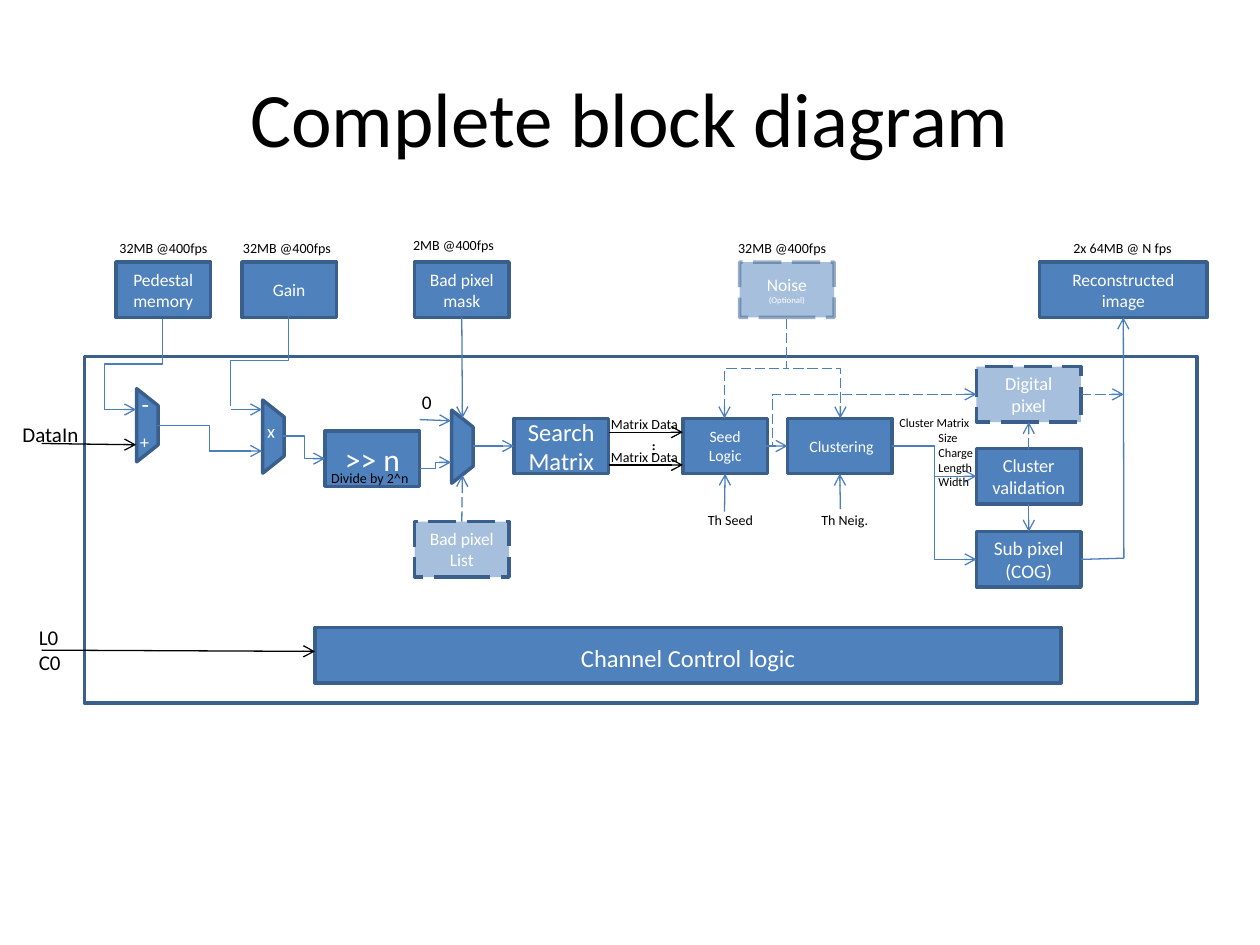
from dataclasses import dataclass
from typing import NamedTuple

from lxml import etree
from pptx import Presentation
from pptx.dml.color import RGBColor
from pptx.enum.dml import MSO_LINE
from pptx.enum.shapes import MSO_CONNECTOR, MSO_SHAPE
from pptx.enum.text import MSO_ANCHOR, MSO_AUTO_SIZE, PP_ALIGN
from pptx.oxml.ns import qn
from pptx.util import Inches, Pt

RECTANGLE, TRAPEZOID = MSO_SHAPE.RECTANGLE, MSO_SHAPE.TRAPEZOID
STRAIGHT, ELBOW = MSO_CONNECTOR.STRAIGHT, MSO_CONNECTOR.ELBOW
LONG_DASH, MIDDLE = MSO_LINE.LONG_DASH, MSO_ANCHOR.MIDDLE
CENTER, LEFT = PP_ALIGN.CENTER, PP_ALIGN.LEFT
FIT_TEXT = MSO_AUTO_SIZE.SHAPE_TO_FIT_TEXT
TOP, WEST, BOTTOM, EAST = range(4)

COLORS = {"block": "4F81BD", "border": "3A5F8C", "wire": "4B7EBC", "black": "000000", "white": "FFFFFF"}
FONT = "Calibri"
BLOCK_HEIGHT = 0.44
MEMORY_TOP = 2.08
STAGE_TOP = 3.32


class Run(NamedTuple):
    text: str
    size: float


class Point(NamedTuple):
    x: float
    y: float


class Joint(NamedTuple):
    block: str
    side: int


@dataclass(frozen=True)
class Block:
    left: float
    top: float
    width: float
    paragraphs: list
    optional: bool = False
    faded_border: bool = False


@dataclass(frozen=True)
class Mux:
    left: float
    top: float
    runs: tuple = ()


@dataclass(frozen=True)
class Label:
    text: str
    left: float
    top: float
    width: float
    height: float = 0.24
    size: float = 8
    vertical: bool = False
    indent: float = 0


@dataclass(frozen=True)
class Wire:
    start: Point | Joint
    end: Point | Joint
    arrow: bool = True
    dashed: bool = False
    color: str = "wire"


@dataclass(frozen=True)
class Elbow:
    start: Point
    end: Point
    arrow: bool = True
    dashed: bool = False
    downward: bool = False
    bend: float = 0.5


def lines(size: float, *texts: str) -> list:
    return [(Run(text, size),) for text in texts]


BLOCKS = {
    "search": Block(4.08, STAGE_TOP, 0.75, lines(14, "Search Matrix")),
    "seed": Block(5.42, STAGE_TOP, 0.67, lines(9, "Seed", "Logic")),
    "clustering": Block(6.25, STAGE_TOP, 0.83, lines(9, " Clustering")),
    "control": Block(2.5, 4.98, 5.92, [(Run("Channel Control", 14), Run(" ", 18), Run("logic", 14))]),
    "pedestal": Block(0.92, MEMORY_TOP, 0.75, lines(10, "Pedestal memory")),
    "gain": Block(1.92, MEMORY_TOP, 0.75, lines(10, "Gain")),
    "mask": Block(3.29, MEMORY_TOP, 0.75, lines(10, "Bad pixel mask")),
    "noise": Block(5.87, MEMORY_TOP, 0.75, lines(10, "Noise") + lines(5, "(Optional)"), True, True),
    "image": Block(8.25, MEMORY_TOP, 1.33, lines(10, "Reconstructed image")),
    "shift": Block(2.58, 3.42, 0.75, lines(18, ">> n")),
    "bad list": Block(3.29, 4.14, 0.75, lines(10, "Bad pixel List"), True),
    "digital": Block(7.75, 2.91, 0.83, lines(10.5, "Digital pixel"), True),
    "validation": Block(7.75, 3.56, 0.83, lines(10.5, "Cluster", "validation")),
    "sub pixel": Block(7.75, 4.22, 0.83, lines(11, "Sub pixel (COG)")),
}

MUXES = [
    Mux(0.88, 3.29, (Run("+", 10.5), Run(" ", 5), Run("-", 14))),
    Mux(1.88, 3.38, (Run("x", 10.5),)),
    Mux(3.38, 3.46),
]

WIRES = [
    Wire(Point(0.33, 3.52), Point(1.08, 3.53), color="black"),
    Wire(Point(0.33, 5.16), Point(2.5, 5.17), color="black"),
    Wire(Point(4.83, 3.43), Point(5.42, 3.43), color="black"),
    Wire(Point(4.83, 3.69), Point(5.42, 3.69), color="black"),
    Wire(Point(0.83, 3.25), Point(1.08, 3.25)),
    Wire(Point(1.83, 3.25), Point(2.08, 3.25)),
    Wire(Point(3.33, 3.33), Point(3.58, 3.34)),
    Wire(Joint("mask", BOTTOM), Point(3.67, 3.32)),
    Wire(Joint("bad list", TOP), Point(3.67, 3.77), dashed=True),
    Wire(Point(3.75, 3.54), Joint("search", WEST)),
    Wire(Joint("seed", EAST), Joint("clustering", WEST)),
    Wire(Point(5.75, 4.06), Joint("seed", BOTTOM)),
    Wire(Point(6.67, 4.04), Joint("clustering", BOTTOM)),
    Wire(Joint("validation", TOP), Joint("digital", BOTTOM), dashed=True),
    Wire(Joint("validation", BOTTOM), Joint("sub pixel", TOP)),
    Wire(Joint("digital", EAST), Point(8.92, 3.13), dashed=True),
    Wire(Point(8.92, 4.43), Joint("sub pixel", EAST), arrow=False),
    Wire(Point(8.92, 4.43), Joint("image", BOTTOM)),
]

ELBOWS = [
    Elbow(Point(1.29, 2.53), Point(0.83, 3.25), arrow=False, downward=True),
    Elbow(Point(2.29, 2.5), Point(1.83, 3.22), arrow=False, downward=True),
    Elbow(Point(1.25, 3.38), Point(2.08, 3.58)),
    Elbow(Point(2.25, 3.46), Point(2.58, 3.64)),
    Elbow(Point(3.33, 3.72), Point(3.58, 3.67)),
    Elbow(Point(7.08, 3.54), Point(7.75, 4.44)),
    Elbow(Point(7.08, 3.54), Point(7.75, 3.78)),
    Elbow(Point(6.08, 3.54), Point(7.75, 3.13), dashed=True, bend=0.03),
    Elbow(Point(6.24, 2.53), Point(6.67, 3.32), dashed=True, downward=True),
    Elbow(Point(6.24, 2.53), Point(5.75, 3.32), dashed=True, downward=True),
]

LABELS = [
    Label("32MB @400fps", 0.85, 1.85, 0.9),
    Label("32MB @400fps", 1.83, 1.85, 0.9),
    Label("2MB @400fps", 3.18, 1.83, 0.85),
    Label("32MB @400fps", 5.76, 1.85, 0.9),
    Label("2x 64MB @ N fps", 8.42, 1.85, 0.99),
    Label("DataIn", 0.08, 3.3, 0.65, 0.3, 12),
    Label("L0\nC0", 0.21, 4.91, 0.38, 0.5, 12),
    Label("0", 3.25, 3.05, 0.28, 0.29, 11),
    Label("Divide by 2^n", 2.53, 3.68, 0.82),
    Label("Matrix Data", 4.75, 3.25, 0.74),
    Label("Matrix Data", 4.75, 3.51, 0.74),
    Label("...", 5, 3.42, 0.37, 0.21, 10, vertical=True),
    Label("Th Seed", 5.52, 4.01, 0.56),
    Label("Th Neig.", 6.42, 4.01, 0.58),
    Label("Cluster Matrix\nSize\nCharge\nLength\nWidth", 7.04, 3.25, 0.8, 0.69, 7, indent=0.31),
]


def rgb(name: str) -> RGBColor:
    return RGBColor.from_string(COLORS[name])


def write(frame, paragraphs: list, color: str, align, indent: float = 0) -> None:
    for index, runs in enumerate(paragraphs):
        paragraph = frame.add_paragraph() if index else frame.paragraphs[0]
        paragraph.alignment = align
        if index and indent:
            paragraph._p.get_or_add_pPr().set("marL", str(Inches(indent)))
        for text, size in runs:
            run = paragraph.add_run()
            run.text = text
            run.font.name, run.font.size = FONT, Pt(size)
            run.font.color.rgb = rgb(color)


def turn_text(frame) -> None:
    frame._txBody.find(qn("a:bodyPr")).set("vert", "vert")


def fade(fill_parent) -> None:
    color = fill_parent.find(qn("a:solidFill")).find(qn("a:srgbClr"))
    etree.SubElement(color, qn("a:alpha"), val="50000")


def add_figure(slide, kind, left: float, top: float, width: float, height: float, filled: bool = True):
    shape = slide.shapes.add_shape(kind, Inches(left), Inches(top), Inches(width), Inches(height))
    shape.shadow.inherit = False
    if filled:
        shape.fill.solid()
        shape.fill.fore_color.rgb = rgb("block")
    else:
        shape.fill.background()
    shape.line.color.rgb = rgb("border")
    shape.line.width = Pt(2)
    return shape


def add_block(slide, block: Block):
    shape = add_figure(slide, RECTANGLE, block.left, block.top, block.width, BLOCK_HEIGHT)
    properties = shape._element.spPr
    if block.optional:
        shape.line.dash_style = LONG_DASH
        fade(properties)
    if block.faded_border:
        fade(properties.find(qn("a:ln")))
    shape.text_frame.vertical_anchor = MIDDLE
    write(shape.text_frame, block.paragraphs, "white", CENTER)
    return shape


def add_mux(slide, mux: Mux) -> None:
    shape = add_figure(slide, TRAPEZOID, mux.left, mux.top, 0.58, 0.17)
    shape.adjustments[0] = 0.793
    shape.rotation = 90
    if mux.runs:
        turn_text(shape.text_frame)
        shape.text_frame.vertical_anchor = MIDDLE
        write(shape.text_frame, [mux.runs], "white", CENTER)


def add_link(slide, kind, start: Point, end: Point, color: str, arrow: bool, dashed: bool):
    link = slide.shapes.add_connector(kind, *(Inches(value) for value in (*start, *end)))
    link.line.color.rgb = rgb(color)
    link.line.width = Pt(0.75)
    if dashed:
        link.line.dash_style = LONG_DASH
    properties = link._element.spPr
    if arrow:
        etree.SubElement(properties.find(qn("a:ln")), qn("a:tailEnd"), type="arrow")
    etree.SubElement(properties, qn("a:effectLst"))
    return link


def add_wire(slide, wire: Wire, shapes: dict) -> None:
    start, end = (Point(0, 0) if isinstance(tip, Joint) else tip for tip in (wire.start, wire.end))
    link = add_link(slide, STRAIGHT, start, end, wire.color, wire.arrow, wire.dashed)
    for tip, connect in ((wire.start, link.begin_connect), (wire.end, link.end_connect)):
        if isinstance(tip, Joint):
            connect(shapes[tip.block], tip.side)


def add_elbow(slide, elbow: Elbow) -> None:
    start, end = elbow.start, elbow.end
    if elbow.downward:
        x, y = (start.x + end.x) / 2, (start.y + end.y) / 2
        across, down = (end.x - start.x) / 2, (end.y - start.y) / 2
        start, end = Point(x - down, y + across), Point(x + down, y - across)
    link = add_link(slide, ELBOW, start, end, "wire", elbow.arrow, elbow.dashed)
    properties = link._element.spPr
    if elbow.downward:
        properties.find(qn("a:xfrm")).set("rot", "5400000")
    guides = properties.find(qn("a:prstGeom")).find(qn("a:avLst"))
    etree.SubElement(guides, qn("a:gd"), name="adj1", fmla=f"val {round(elbow.bend * 100000)}")


def add_label(slide, label: Label) -> None:
    box = slide.shapes.add_textbox(*(Inches(v) for v in (label.left, label.top, label.width, label.height)))
    frame = box.text_frame
    frame.word_wrap = False
    frame.auto_size = FIT_TEXT
    if label.vertical:
        turn_text(frame)
    write(frame, lines(label.size, *label.text.split("\n")), "black", LEFT, label.indent)


def add_title(slide, text: str) -> None:
    frame = slide.shapes.add_textbox(Inches(0.5), Inches(0.3), Inches(9), Inches(1.25)).text_frame
    frame.word_wrap = True
    frame.vertical_anchor = MIDDLE
    write(frame, lines(44, text), "black", CENTER)


def main() -> None:
    deck = Presentation()
    deck.slide_width, deck.slide_height = Inches(10), Inches(7.5)
    slide = deck.slides.add_slide(deck.slide_layouts[6])
    add_title(slide, "Complete block diagram")
    add_figure(slide, RECTANGLE, 0.67, 2.83, 8.83, 2.75, filled=False)
    shapes = {name: add_block(slide, block) for name, block in BLOCKS.items()}
    for mux in MUXES:
        add_mux(slide, mux)
    for wire in WIRES:
        add_wire(slide, wire, shapes)
    for elbow in ELBOWS:
        add_elbow(slide, elbow)
    for label in LABELS:
        add_label(slide, label)
    deck.save("out.pptx")


if __name__ == "__main__":
    main()
